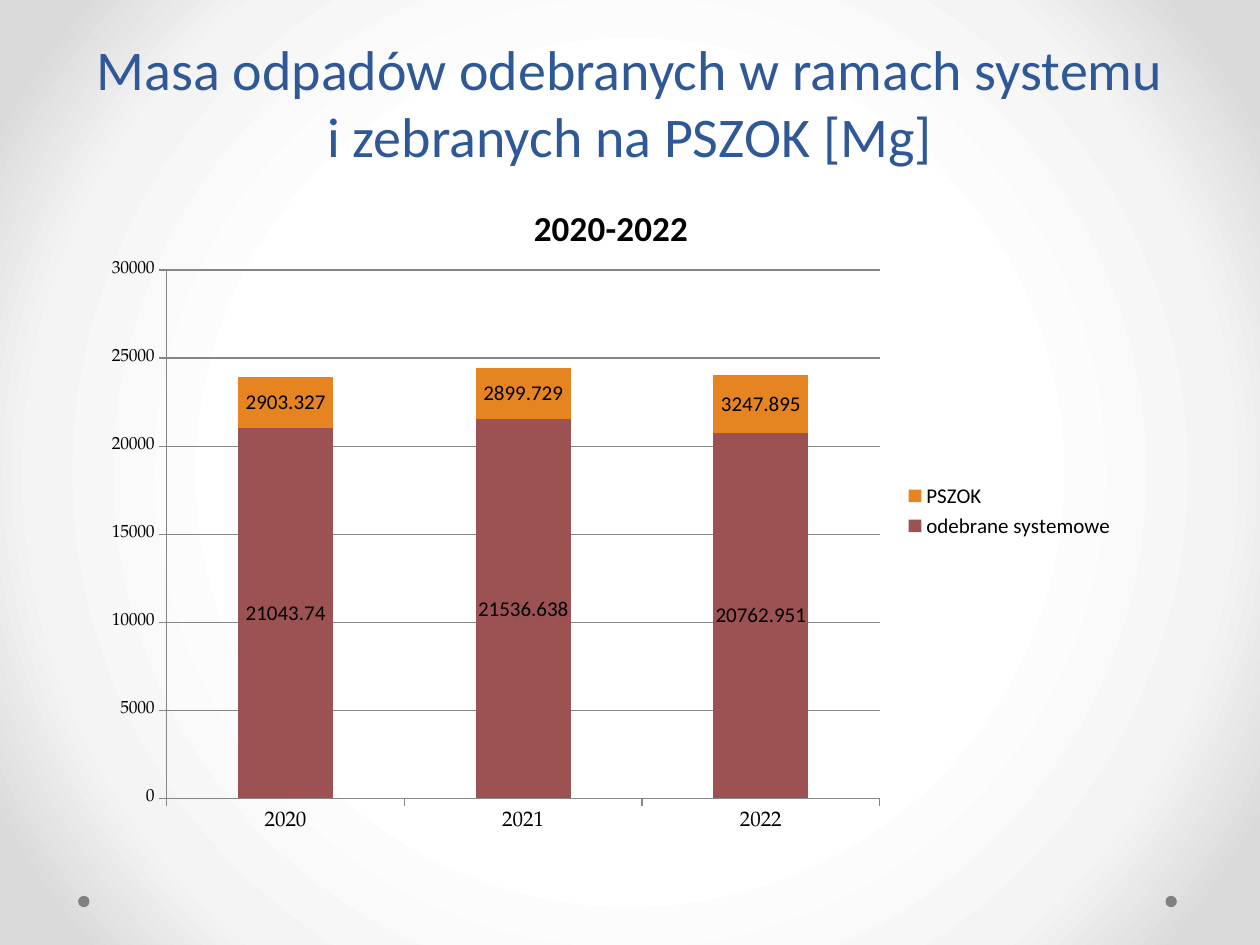
from lxml import etree
from pptx import Presentation
from pptx import util as u
from pptx.chart.data import CategoryChartData
from pptx.dml.color import RGBColor
from pptx.enum import chart as charts, shapes, text
from pptx.oxml import parse_xml
from pptx.oxml.ns import nsdecls, qn

COLORS = {
    "title": "2F5897", "ink": "000000", "dot": "808080", "axis": "868686",
    "odebrane systemowe": "9C5252", "PSZOK": "E68422",
}
BACKDROP = [(0, "FFFFFF"), (50, "FFFFFF"), (76, "F4F4F4"), (92, "DADADA"), (100, "DADADA")]
SERIES = {
    "odebrane systemowe": (21043.74, 21536.638, 20762.951),
    "PSZOK": (2903.327, 2899.729, 3247.895),
}
PLOT_LAYOUT = {"x": 0.07, "y": 0.14, "w": 0.69, "h": 0.79}


def set_font(font, name, size, color="ink", bold=False):
    font.name = name
    font.size = u.Pt(size)
    font.bold = bold
    font.color.rgb = RGBColor.from_string(COLORS[color])


deck = Presentation()
deck.slide_width = u.Inches(10)
deck.slide_height = u.Inches(7.5)
page = deck.slides.add_slide(deck.slide_layouts[6])

page.background.fill.solid()
solid = page.element.find(".//" + qn("p:bgPr")).find(qn("a:solidFill"))
stops = "".join(
    f'<a:gs pos="{place * 1000}"><a:srgbClr val="{color}"/></a:gs>' for place, color in BACKDROP
)
gradient = parse_xml(
    f'<a:gradFill {nsdecls("a")} rotWithShape="1"><a:gsLst>{stops}</a:gsLst>'
    '<a:path path="circle"><a:fillToRect l="50000" t="50000" r="50000" b="50000"/></a:path>'
    "</a:gradFill>"
)
solid.getparent().replace(solid, gradient)

for left in (9.25, 0.62):
    dot = page.shapes.add_shape(
        shapes.MSO_SHAPE.OVAL, u.Inches(left), u.Inches(7.11), u.Inches(0.09), u.Inches(0.09)
    )
    dot.shadow.inherit = False
    dot.fill.solid()
    dot.fill.fore_color.rgb = RGBColor.from_string(COLORS["dot"])
    dot.line.fill.background()

title_box = page.shapes.add_textbox(u.Inches(0.5), u.Inches(0), u.Inches(9), u.Inches(1.39))
title_box.text_frame.word_wrap = True
title_box.text_frame.vertical_anchor = text.MSO_ANCHOR.BOTTOM
para = title_box.text_frame.paragraphs[0]
para.alignment = text.PP_ALIGN.CENTER
for index, line in enumerate(("Masa odpadów odebranych w ramach systemu", "i zebranych na PSZOK [Mg]")):
    if index:
        para.add_line_break()
    span = para.add_run()
    span.text = line
    set_font(span.font, "Calibri", 32, "title")

data = CategoryChartData()
data.categories = ["2020", "2021", "2022"]
for name, values in SERIES.items():
    data.add_series(name, values)
chart = page.shapes.add_chart(
    charts.XL_CHART_TYPE.COLUMN_STACKED,
    u.Inches(0.75), u.Inches(1.4), u.Inches(8.2), u.Inches(5.31), data,
).chart
set_font(chart.font, "TeX Gyre Pagella", 10)

chart.has_title = True
span = chart.chart_title.text_frame.paragraphs[0].add_run()
span.text = "2020-2022"
set_font(span.font, "Calibri", 20, bold=True)
chart.chart_title.include_in_layout = False

chart.has_legend = True
chart.legend.position = charts.XL_LEGEND_POSITION.RIGHT
chart.legend.include_in_layout = False
set_font(chart.legend.font, "Calibri", 12)

for axis, size in ((chart.category_axis, 12), (chart.value_axis, 10)):
    set_font(axis.tick_labels.font, "TeX Gyre Pagella", size)
    axis.major_tick_mark = charts.XL_TICK_MARK.OUTSIDE
    axis.format.line.color.rgb = RGBColor.from_string(COLORS["axis"])
chart.value_axis.minimum_scale = 0
chart.value_axis.has_major_gridlines = True
chart.value_axis.major_gridlines.format.line.color.rgb = RGBColor.from_string(COLORS["axis"])

plot = chart.plots[0]
plot.gap_width = 150
plot.overlap = 100
plot.vary_by_categories = False
for series in plot.series:
    series.format.fill.solid()
    series.format.fill.fore_color.rgb = RGBColor.from_string(COLORS[series.name])
    labels = series.data_labels
    labels.show_value = True
    set_font(labels.font, "Calibri", 12)

plot_area = chart.element.find(".//" + qn("c:plotArea"))
for old_layout in plot_area.findall(qn("c:layout")):
    plot_area.remove(old_layout)
layout = etree.Element(qn("c:layout"))
manual = etree.SubElement(layout, qn("c:manualLayout"))
settings = {"layoutTarget": "inner", "xMode": "edge", "yMode": "edge", **PLOT_LAYOUT}
for tag, value in settings.items():
    etree.SubElement(manual, qn("c:" + tag)).set("val", str(value))
plot_area.insert(0, layout)

deck.save("out.pptx")
